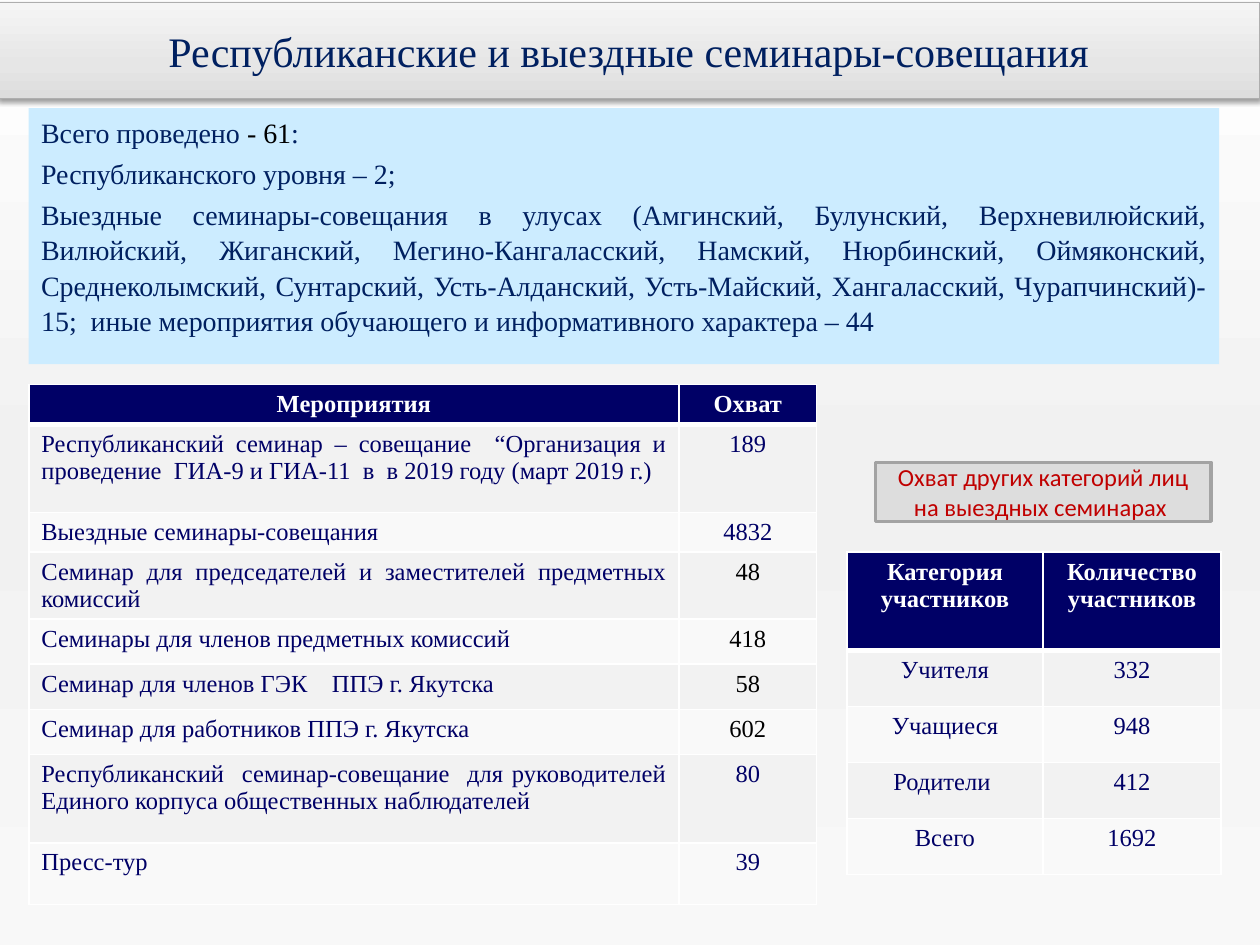
import pptx
import pptx.dml.color
import pptx.enum.shapes
import pptx.enum.text
import pptx.oxml
import pptx.oxml.ns
import pptx.util

Cm = pptx.util.Cm
Pt = pptx.util.Pt
RGBColor = pptx.dml.color.RGBColor
ALIGN = pptx.enum.text.PP_ALIGN
MIDDLE = pptx.enum.text.MSO_ANCHOR.MIDDLE
qn = pptx.oxml.ns.qn

SERIF, SANS = "Times New Roman", "Calibri"
WHITE = RGBColor(0xFF, 0xFF, 0xFF)
BLACK = RGBColor(0, 0, 0)
INK = RGBColor(0x00, 0x20, 0x60)
NAVY = RGBColor(0x00, 0x00, 0x66)
RED = RGBColor(0xC0, 0x00, 0x00)
SKY = RGBColor(0xCC, 0xEC, 0xFF)
SILVER = RGBColor(0xDD, 0xDD, 0xDD)
SILVER_EDGE = RGBColor(0xA3, 0xA3, 0xA3)
TITLE_EDGE = RGBColor(0xAE, 0xAE, 0xAE)
ROW_FILLS = (RGBColor(0xF2, 0xF2, 0xF2), RGBColor(0xF9, 0xF9, 0xF9))
BACKGROUND_STOPS = [(0, WHITE), (50, RGBColor(0xF1, 0xF1, 0xF1)), (100, RGBColor(0xF8, 0xF8, 0xF8))]
TITLE_STOPS = [(0, SILVER), (35, RGBColor(0xE6, 0xE6, 0xE6)), (100, RGBColor(0xF5, 0xF5, 0xF5))]

NAMESPACE = 'xmlns:a="http://schemas.openxmlformats.org/drawingml/2006/main"'


def write(paragraph, text, font=SERIF, size=14, color=NAVY, bold=False, align=ALIGN.CENTER):
    """Add one formatted run to a paragraph."""
    paragraph.alignment = align
    run = paragraph.add_run()
    run.text = text
    run.font.name = font
    run.font.size = Pt(size)
    run.font.bold = bold
    run.font.color.rgb = color


def set_gradient(fill, element, stops, angle):
    fill.gradient()
    fill.gradient_angle = angle
    stop_list = next(element.iter(qn("a:gsLst")))
    for stop in list(stop_list):
        stop_list.remove(stop)
    for position, color in stops:
        stop_list.append(pptx.oxml.parse_xml(
            f'<a:gs {NAMESPACE} pos="{position * 1000}"><a:srgbClr val="{color}"/></a:gs>'))


def set_borders(cell, bottom):
    """White lines round a cell; must come before its fill."""
    properties = cell._tc.get_or_add_tcPr()
    for side, width in (("L", 1), ("R", 1), ("T", 1), ("B", bottom)):
        properties.append(pptx.oxml.parse_xml(
            f'<a:ln{side} {NAMESPACE} w="{Pt(width)}"><a:solidFill>'
            f'<a:srgbClr val="{WHITE}"/></a:solidFill></a:ln{side}>'))


class SeminarSlide:
    def __init__(self, presentation):
        self.slide = presentation.slides.add_slide(presentation.slide_layouts[5])
        background = self.slide.background
        set_gradient(background.fill, self.slide.element, BACKGROUND_STOPS, 270)

    def title(self, text, left, top, width, height):
        shape = self.slide.shapes.title
        shape.left, shape.top, shape.width, shape.height = map(Cm, (left, top, width, height))
        set_gradient(shape.fill, shape.element, TITLE_STOPS, 90)
        shape.line.color.rgb = TITLE_EDGE
        shape.line.width = Pt(0.75)
        shape.element.spPr.append(pptx.oxml.parse_xml(
            f'<a:effectLst {NAMESPACE}><a:outerShdw blurRad="{Pt(3.1)}" dist="{Pt(1.6)}" '
            f'dir="5400000" rotWithShape="0"><a:srgbClr val="{BLACK}"><a:alpha val="38000"/>'
            '</a:srgbClr></a:outerShdw></a:effectLst>'))
        shape.text_frame.vertical_anchor = MIDDLE
        write(shape.text_frame.paragraphs[0], text, size=24, color=INK)

    def box(self, left, top, width, height, fill, edge=None):
        shape = self.slide.shapes.add_shape(
            pptx.enum.shapes.MSO_SHAPE.RECTANGLE, *map(Cm, (left, top, width, height)))
        shape.shadow.inherit = False
        shape.fill.solid()
        shape.fill.fore_color.rgb = fill
        if edge is None:
            shape.line.fill.background()
        else:
            shape.line.color.rgb = edge
            shape.line.width = Pt(2)
        shape.text_frame.word_wrap = True
        return shape.text_frame

    def summary(self, paragraphs, *place):
        frame = self.box(*place, fill=SKY)
        frame.vertical_anchor = pptx.enum.text.MSO_ANCHOR.TOP
        for index, runs in enumerate(paragraphs):
            paragraph = frame.paragraphs[0] if index == 0 else frame.add_paragraph()
            paragraph.space_before = Pt(3.2)
            paragraph.line_spacing = 1.05
            for text, color in runs:
                write(paragraph, text, size=16, color=color, align=ALIGN.JUSTIFY)

    def callout(self, text, *place):
        frame = self.box(*place, fill=SILVER, edge=SILVER_EDGE)
        frame.vertical_anchor = MIDDLE
        write(frame.paragraphs[0], text, font=SANS, color=RED)

    def table(self, rows, left, top, widths, heights, first_align=ALIGN.CENTER, black=()):
        """Header row plus striped rows; values listed in black are not navy."""
        table = self.slide.shapes.add_table(
            len(rows), len(widths), Cm(left), Cm(top), Cm(sum(widths)), Cm(sum(heights))).table
        for column, width in zip(table.columns, widths):
            column.width = Cm(width)
        for index, (values, height) in enumerate(zip(rows, heights)):
            header = index == 0
            table.rows[index].height = Cm(height)
            for column, value in enumerate(values):
                cell = table.cell(index, column)
                set_borders(cell, bottom=3 if header else 1)
                cell.fill.solid()
                cell.fill.fore_color.rgb = NAVY if header else ROW_FILLS[(index - 1) % 2]
                color = WHITE if header else BLACK if value in black else NAVY
                align = first_align if column == 0 and not header else ALIGN.CENTER
                write(cell.text_frame.paragraphs[0], value, color=color, bold=header, align=align)


def main():
    presentation = pptx.Presentation()
    presentation.slide_width, presentation.slide_height = Cm(25.4), Cm(19.05)
    page = SeminarSlide(presentation)

    # Title bar
    page.title("Республиканские и выездные семинары-совещания", -0.05, 0.05, 25.45, 1.93)

    # Summary of all seminars
    page.summary([
        [("Всего проведено ", INK), ("- 61", BLACK), (":", INK)],
        [("Республиканского уровня – 2;", INK)],
        [("Выездные семинары-совещания в улусах (Амгинский, Булунский, Верхневилюйский, "
          "Вилюйский, Жиганский, Мегино-Кангаласский, Намский, Нюрбинский, Оймяконский, "
          "Среднеколымский, Сунтарский, Усть-Алданский, Усть-Майский, Хангаласский, "
          "Чурапчинский)- 15;  иные мероприятия обучающего и информативного характера – 44", INK)],
    ], 0.58, 2.18, 24, 5.16)

    # Events and their coverage
    page.table([
        ("Мероприятия", "Охват"),
        ("Республиканский семинар – совещание  “Организация и проведение  ГИА-9 и ГИА-11  в  "
         "в 2019 году (март 2019 г.)", "189"),
        ("Выездные семинары-совещания", "4832"),
        ("Семинар для председателей и заместителей предметных комиссий", "48"),
        ("Семинары для членов предметных комиссий", "418"),
        ("Семинар для членов ГЭК    ППЭ г. Якутска", "58"),
        ("Семинар для работников ППЭ г. Якутска", "602"),
        ("Республиканский  семинар-совещание  для руководителей Единого корпуса "
         "общественных наблюдателей", "80"),
        ("Пресс-тур", "39"),
    ], 0.58, 7.75, widths=(13.11, 2.77),
        heights=(0.74, 1.78, 0.74, 1.3, 0.91, 0.91, 0.91, 1.78, 1.24),
        first_align=ALIGN.JUSTIFY, black=("48", "418", "58", "602"))

    # Other participants
    page.table([
        ("Категория участников", "Количество участников"),
        ("Учителя", "332"),
        ("Учащиеся", "948"),
        ("Родители ", "412"),
        ("Всего", "1692"),
    ], 17.07, 11.13, widths=(3.96, 3.58), heights=(1.98,) + (1.13,) * 4)
    page.callout("Охват других категорий лиц на выездных семинарах ", 17.65, 9.32, 6.76, 1.19)

    presentation.save("out.pptx")


if __name__ == "__main__":
    main()
